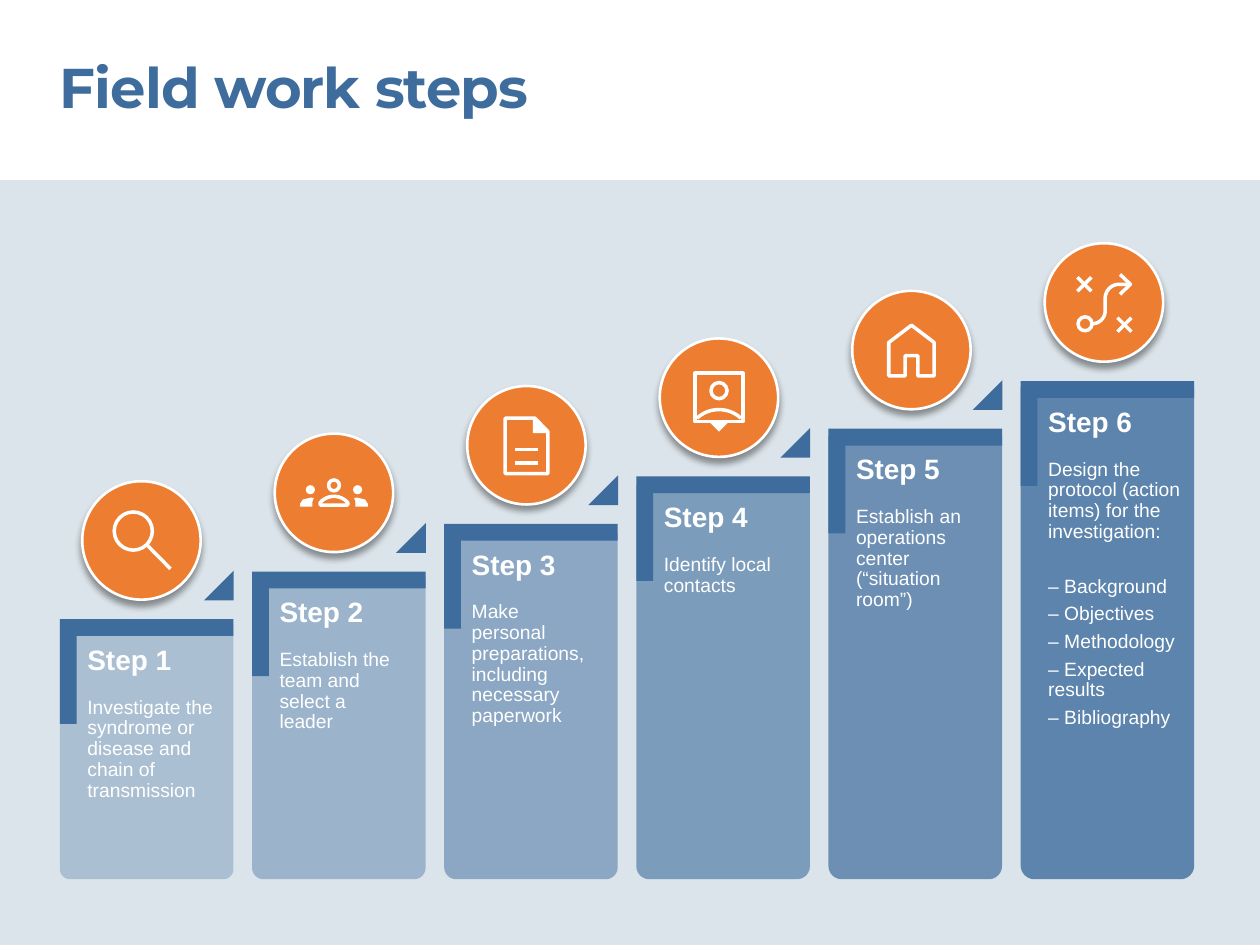
import math
import lxml.etree
import pptx
import pptx.dml.color
import pptx.enum.shapes
import pptx.oxml
import pptx.oxml.ns
import pptx.util

Pt = pptx.util.Pt
qualify = pptx.oxml.ns.qn
SHAPE = pptx.enum.shapes.MSO_SHAPE
BLUE, ORANGE, WHITE = "3D6C9D", "ED7D31", "FFFFFF"
COLUMN_LEFT, COLUMN_PITCH, COLUMN_WIDTH = 34.2, 109.8, 99.2
FIRST_TOP, RISE, BASELINE = 353.8, 27.2, 502.4
CIRCLE_SIZE = 67.7
STEPS = [
    (356.4, 0.058, 90, ["Investigate the syndrome or disease and chain of transmission"]),
    (329.8, 0.066, 75, ["Establish the team and select a leader"]),
    (304.6, 0.069, 75.6, ["Make personal preparations, including necessary paperwork"]),
    (277.2, 0.074, 75.6, ["Identify local contacts"]),
    (249.1, 0.076, 78.5, ["Establish an operations center (“situation room”)"]),
    (221, 0.079, 90, ["Design the protocol (action items) for the investigation:",
                      "– Background", "– Objectives", "– Methodology",
                      "– Expected results", "– Bibliography"]),
]

def rgb(color):
    return pptx.dml.color.RGBColor.from_string(color)

def paint(shape, fill=None, line=None, width=2):
    shape.shadow.inherit = False
    if fill:
        shape.fill.solid()
        shape.fill.fore_color.rgb = rgb(fill)
    else:
        shape.fill.background()
    if line:
        shape.line.color.rgb = rgb(line)
        shape.line.width = Pt(width)
    else:
        shape.line.fill.background()

def add_preset(slide, preset, left, top, width, height, fill=None, line=None):
    shape = slide.shapes.add_shape(preset, Pt(left), Pt(top), Pt(width), Pt(height))
    paint(shape, fill, line)
    return shape

def add_text_box(slide, left, top, width, height, margins):
    box = slide.shapes.add_textbox(Pt(left), Pt(top), Pt(width), Pt(height))
    frame = box.text_frame
    frame.word_wrap = True
    (frame.margin_left, frame.margin_top,
     frame.margin_right, frame.margin_bottom) = map(Pt, margins)
    return frame

def format_runs(paragraph, font, size, color, bold=False):
    for run in paragraph.runs:
        run.font.name = font
        run.font.size = Pt(size)
        run.font.bold = bold
        run.font.color.rgb = rgb(color)

def add_title(slide):
    frame = add_text_box(slide, 34.2, 30.2, 615.6, 39, (0, 0, 0, 0))
    frame.text = "Field work steps"
    paragraph = frame.paragraphs[0]
    format_runs(paragraph, "Montserrat", 32, BLUE, bold=True)
    paragraph.runs[0].font._element.set("spc", "-50")

def add_bar(slide, index, top, rounding):
    bar = add_preset(slide, SHAPE.ROUND_2_SAME_RECTANGLE, COLUMN_LEFT + COLUMN_PITCH * index,
                     top, COLUMN_WIDTH, BASELINE - top, BLUE)
    bar.rotation = 180
    bar.adjustments[0] = rounding
    color = bar._element.spPr.find(".//" + qualify("a:srgbClr"))
    lxml.etree.SubElement(color, qualify("a:alpha")).set("val", str(30000 + 10000 * index))

def add_corner(slide, left, top, depth=59.8):
    shift = (COLUMN_WIDTH - depth) / 2
    corner = add_preset(slide, SHAPE.RECTANGLE, left + shift, top - shift,
                        depth, COLUMN_WIDTH, BLUE)
    corner.rotation = 90
    geometry = corner._element.spPr.find(qualify("a:prstGeom"))
    geometry.set("prst", "corner")
    for name in ("adj1", "adj2"):
        guide = lxml.etree.SubElement(geometry.find(qualify("a:avLst")), qualify("a:gd"))
        guide.set("name", name)
        guide.set("fmla", "val 16100")

def add_step(slide, index, text_width, texts):
    left = COLUMN_LEFT + COLUMN_PITCH * index
    top = FIRST_TOP - RISE * index
    last = index == len(STEPS) - 1
    add_corner(slide, left, top)
    frame = add_text_box(slide, left + 10, top + 9.7, text_width, 78.5,
                         (5.76, 5.76, 0 if last else 2.88, 5.76))
    frame.text = "\n".join([f"Step {index + 1}"] + texts)
    for number, paragraph in enumerate(frame.paragraphs):
        heading = number == 0
        paragraph.line_spacing = 0.9
        paragraph.space_after = Pt(12 if heading else 3.85)
        paragraph.space_before = Pt(15.7 if number == 2 else 0)
        format_runs(paragraph, "Arial", 16 if heading else 11, WHITE, heading)
    if not last:
        triangle = add_preset(slide, SHAPE.ISOSCELES_TRIANGLE, left + 82.4, top - 27.7,
                              17, 17, BLUE)
        triangle.adjustments[0] = 1

def add_circle(slide, index):
    left = 47 + 110 * index
    top = FIRST_TOP - RISE * index - 78.8
    circle = add_preset(slide, SHAPE.OVAL, left, top, CIRCLE_SIZE, CIRCLE_SIZE)
    paint(circle, ORANGE, WHITE, 1.5)
    properties = circle._element.spPr
    properties.remove(properties.find(qualify("a:effectLst")))
    properties.append(pptx.oxml.parse_xml(
        f'<a:effectLst {pptx.oxml.ns.nsdecls("a")}>'
        f'<a:outerShdw blurRad="{Pt(4)}" dist="{Pt(3)}" dir="5400000" rotWithShape="0">'
        '<a:srgbClr val="000000"><a:alpha val="40000"/></a:srgbClr>'
        '</a:outerShdw></a:effectLst>'))
    return left + CIRCLE_SIZE / 2, top + CIRCLE_SIZE / 2

def add_ring(slide, center, x, y, radius, filled=False):
    add_preset(slide, SHAPE.OVAL, center[0] + x - radius, center[1] + y - radius,
               2 * radius, 2 * radius, WHITE if filled else None, None if filled else WHITE)

def add_stroke(slide, center, x1, y1, x2, y2):
    line = slide.shapes.add_connector(
        pptx.enum.shapes.MSO_CONNECTOR.STRAIGHT,
        Pt(center[0] + x1), Pt(center[1] + y1), Pt(center[0] + x2), Pt(center[1] + y2))
    line.line.color.rgb = rgb(WHITE)
    line.line.width = Pt(2)
    lxml.etree.SubElement(line._element.spPr, qualify("a:effectLst"))

def add_outline(slide, center, points, filled=False, close=True):
    spots = [(Pt(center[0] + x), Pt(center[1] + y)) for x, y in points]
    builder = slide.shapes.build_freeform(*spots[0])
    builder.add_line_segments(spots[1:], close=close)
    paint(builder.convert_to_shape(), WHITE if filled else None, None if filled else WHITE)

def arc(x, y, radius, start, end, parts=12):
    angles = [math.radians(start + (end - start) * part / parts) for part in range(parts + 1)]
    return [(x + radius * math.cos(angle), y + radius * math.sin(angle)) for angle in angles]

def icon_parts():
    shoulder = [(19.4, 7.9), (19.4, 6.3), (17.8, 3.8), (13.3, 2.7),
                (11.5, 2.9), (12.3, 5), (12.3, 7.9)]
    house = [(0, -14.2), (13, -4.3), (13, 14.8), (3.6, 14.8), (3.6, 3.2)]
    route = arc(-6.8, 4.7, 7.5, 90, 0) + arc(8.7, -2.4, 8, 180, 270) + [(15, -10.4)]
    magnifier = [(add_ring, -4.7, -5.4, 10.9), (add_stroke, 3.2, 2.6, 16.6, 16.2)]
    team = [(add_ring, 0, -4.3, 3.1),
            (add_outline, [(-7.9, 7)] + arc(0, 12.5, 10.5, 221, 319) + [(7.9, 7)])]
    for side in (-1, 1):
        team += [(add_ring, side * 13.5, -1.8, 2.6, True),
                 (add_outline, [(side * x, y) for x, y in shoulder], True)]
    document = [(add_outline, [(-12.2, -15.5), (4.8, -15.5), (12.2, -7.8),
                               (12.2, 16.2), (-12.2, 16.2)]),
                (add_outline, [(3.6, -16), (3.6, -7), (12.7, -7)], True)]
    document += [(add_stroke, -6.5, y, 6.5, y) for y in (2.5, 10.1)]
    contact = [(add_outline, [(-13.7, -14), (13.7, -14), (13.7, 13.6), (-13.7, 13.6)]),
               (add_ring, 0, -4, 4.6),
               (add_outline, arc(0, 25.2, 18.4, 227, 313), False, False),
               (add_outline, [(-5, 14.4), (5, 14.4), (0, 19.4)], True)]
    home = [(add_outline, house + [(-x, y) for x, y in house[:0:-1]])]
    strategy = [(add_ring, -10.8, 12.2, 4), (add_outline, route, False, False),
                (add_outline, [(9.2, -16), (15.1, -10.4), (9.2, -4.6)], False, False)]
    strategy += [(add_stroke, x - 4, y - slope, x + 4, y + slope)
                 for x, y in ((-11.2, -10.4), (11.7, 12.7)) for slope in (4, -4)]
    return magnifier, team, document, contact, home, strategy

def main():
    presentation = pptx.Presentation()
    presentation.slide_width, presentation.slide_height = Pt(720), Pt(540)
    slide = presentation.slides.add_slide(presentation.slide_layouts[6])
    add_preset(slide, SHAPE.RECTANGLE, 0, 103, 720, 437, "DBE4EA")
    for index, (top, rounding, _, _) in enumerate(STEPS):
        add_bar(slide, index, top, rounding)
    add_title(slide)
    for index, (_, _, text_width, texts) in enumerate(STEPS):
        add_step(slide, index, text_width, texts)
    for index, parts in enumerate(icon_parts()):
        center = add_circle(slide, index)
        for draw, *details in parts:
            draw(slide, center, *details)
    presentation.save("out.pptx")

if __name__ == "__main__":
    main()
